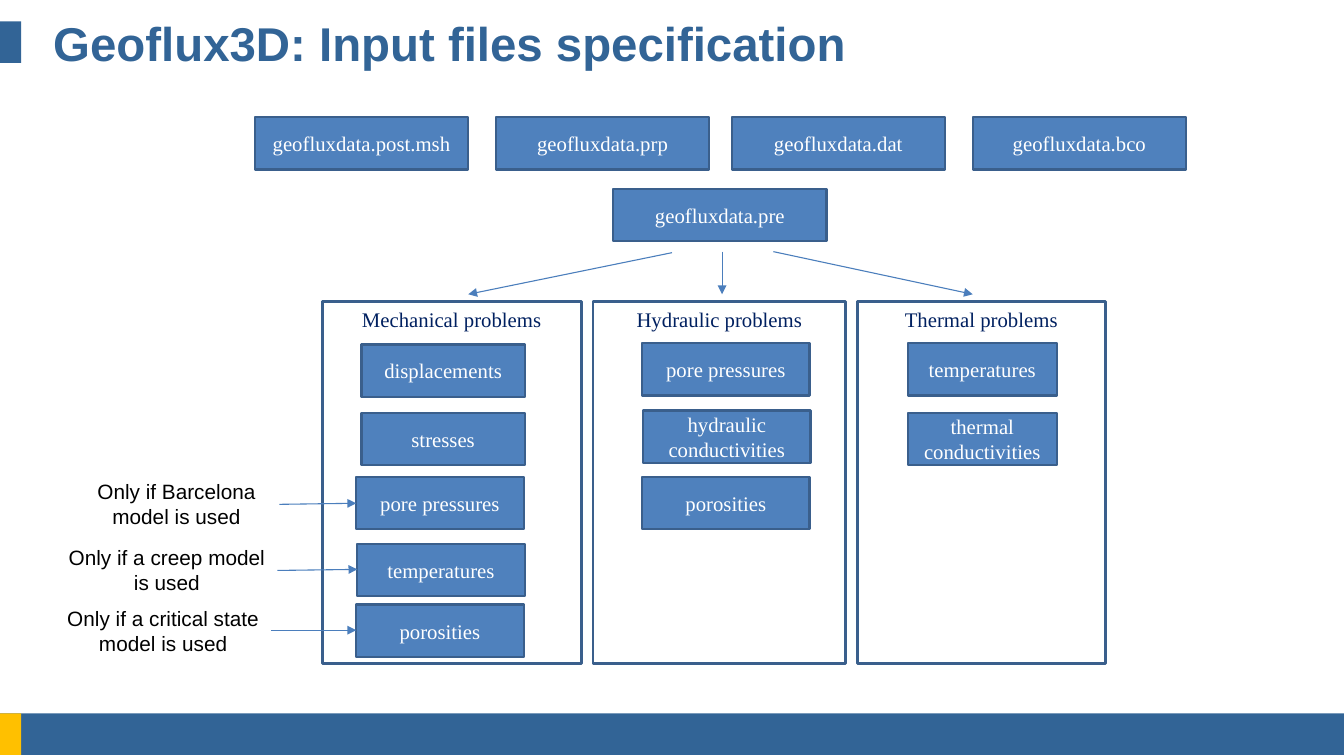
from dataclasses import dataclass

from lxml import etree
from pptx import Presentation
from pptx import util as u
from pptx.dml.color import RGBColor
from pptx.enum import shapes, text
from pptx.oxml import ns

NAVY, GOLD, WHITE = "326496", "FFC000", "FFFFFF"
BOX, EDGE, ARROW, HEADING = "4F81BD", "3A5F8C", "4B7EBC", "002060"
SERIF, SANS = "Times New Roman", "Arial"
BOX_H = 0.49
PANEL_TOP, PANEL_H = 2.83, 3.39


@dataclass
class Box:
    label: str
    x: float
    y: float
    w: float = 2.0


@dataclass
class Panel:
    heading: str
    x: float
    w: float
    files: list[Box]


@dataclass
class Note:
    label: str
    x: float
    y: float
    w: float


@dataclass
class Arrow:
    x1: float
    y1: float
    x2: float
    y2: float


INPUTS = [
    Box("geofluxdata.post.msh", 2.39, 1.1),
    Box("geofluxdata.prp", 4.65, 1.1),
    Box("geofluxdata.dat", 6.86, 1.1),
    Box("geofluxdata.bco", 9.12, 1.1),
    Box("geofluxdata.pre", 5.75, 1.77),
]
PANELS = [
    Panel("Mechanical problems", 3.02, 2.43, [
        Box("displacements", 3.39, 3.23, 1.53),
        Box("stresses", 3.39, 3.87, 1.53),
        Box("pore pressures", 3.34, 4.47, 1.57),
        Box("temperatures", 3.35, 5.1, 1.57),
        Box("porosities", 3.34, 5.67, 1.57),
    ]),
    Panel("Hydraulic problems", 5.56, 2.37, [
        Box("pore pressures", 6.02, 3.22, 1.57),
        Box("hydraulic conductivities", 6.03, 3.85, 1.57),
        Box("porosities", 6.02, 4.47, 1.57),
    ]),
    Panel("Thermal problems", 8.04, 2.32, [
        Box("temperatures", 8.51, 3.22, 1.4),
        Box("thermal conductivities", 8.51, 3.87, 1.4),
    ]),
]
NOTES = [
    Note("Only if Barcelona model is used", 0.69, 4.44, 1.93),
    Note("Only if a creep model is used", 0.53, 5.06, 2.07),
    Note("Only if a critical state model is used", 0.53, 5.63, 2.0),
]
ARROWS = [
    Arrow(6.3, 2.37, 4.39, 2.76),
    Arrow(6.77, 2.36, 6.77, 2.76),
    Arrow(7.25, 2.36, 9.12, 2.76),
    Arrow(2.62, 4.73, 3.34, 4.72),
    Arrow(2.6, 5.35, 3.35, 5.34),
    Arrow(2.54, 5.91, 3.34, 5.91),
]


def rgb(value: str) -> RGBColor:
    return RGBColor.from_string(value)


def apply(target, values: dict) -> None:
    for name, value in values.items():
        setattr(target, name, value)


def write(sp, label: str, font: str, color: str, size: float = 14,
          bold: bool = False, align=text.PP_ALIGN.CENTER,
          anchor=text.MSO_ANCHOR.TOP, side: float = 0.1) -> None:
    tf = sp.text_frame
    apply(tf, {
        "word_wrap": True, "vertical_anchor": anchor,
        "margin_left": u.Inches(side), "margin_right": u.Inches(side),
        "margin_top": u.Inches(0.05), "margin_bottom": u.Inches(0.05),
    })
    p = tf.paragraphs[0]
    p.alignment = align
    r = p.add_run()
    r.text = label
    apply(r.font, {"name": font, "size": u.Pt(size), "bold": bold})
    r.font.color.rgb = rgb(color)


def add_rect(s, x: float, y: float, w: float, h: float,
             fill: str | None = None, line: float = 0):
    sp = s.shapes.add_shape(shapes.MSO_SHAPE.RECTANGLE, u.Inches(x),
                            u.Inches(y), u.Inches(w), u.Inches(h))
    sp.shadow.inherit = False
    if fill:
        sp.fill.solid()
        sp.fill.fore_color.rgb = rgb(fill)
    else:
        sp.fill.background()
    if line:
        sp.line.color.rgb = rgb(EDGE)
        sp.line.width = u.Pt(line)
    else:
        sp.line.fill.background()
    return sp


def add_textbox(s, x: float, y: float, w: float, h: float):
    return s.shapes.add_textbox(u.Inches(x), u.Inches(y),
                                u.Inches(w), u.Inches(h))


def add_box(s, box: Box) -> None:
    sp = add_rect(s, box.x, box.y, box.w, BOX_H, BOX, 1.5)
    write(sp, box.label, SERIF, WHITE, anchor=text.MSO_ANCHOR.MIDDLE, side=0)


def add_panel(s, panel: Panel) -> None:
    sp = add_rect(s, panel.x, PANEL_TOP, panel.w, PANEL_H, line=2)
    write(sp, panel.heading, SERIF, HEADING)
    for box in panel.files:
        add_box(s, box)


def add_note(s, note: Note) -> None:
    write(add_textbox(s, note.x, note.y, note.w, 0.57),
          note.label, SANS, "000000")


def add_arrow(s, a: Arrow) -> None:
    c = s.shapes.add_connector(shapes.MSO_CONNECTOR.STRAIGHT,
                               u.Inches(a.x1), u.Inches(a.y1),
                               u.Inches(a.x2), u.Inches(a.y2))
    c.line.color.rgb = rgb(ARROW)
    c.line.width = u.Pt(0.75)
    ln = c.line._get_or_add_ln()
    etree.SubElement(ln, ns.qn("a:tailEnd"), type="triangle")
    etree.SubElement(c._element.spPr, ns.qn("a:effectLst"))


def main() -> None:
    prs = Presentation()
    apply(prs, {"slide_width": u.Inches(12.6), "slide_height": u.Inches(7.09)})
    s = prs.slides.add_slide(prs.slide_layouts[6])

    add_rect(s, 0, 6.69, 12.6, 0.39, NAVY)
    add_rect(s, 0, 6.69, 0.2, 0.39, GOLD)
    add_rect(s, 0, 0.2, 0.2, 0.39, NAVY)
    write(add_textbox(s, 0.4, 0.2, 11.81, 0.39),
          "Geoflux3D: Input files specification", SANS, NAVY, size=32,
          bold=True, align=text.PP_ALIGN.LEFT, anchor=text.MSO_ANCHOR.MIDDLE)

    for box in INPUTS:
        add_box(s, box)
    for panel in PANELS:
        add_panel(s, panel)
    for note in NOTES:
        add_note(s, note)
    for arrow in ARROWS:
        add_arrow(s, arrow)

    prs.save("out.pptx")


if __name__ == "__main__":
    main()
